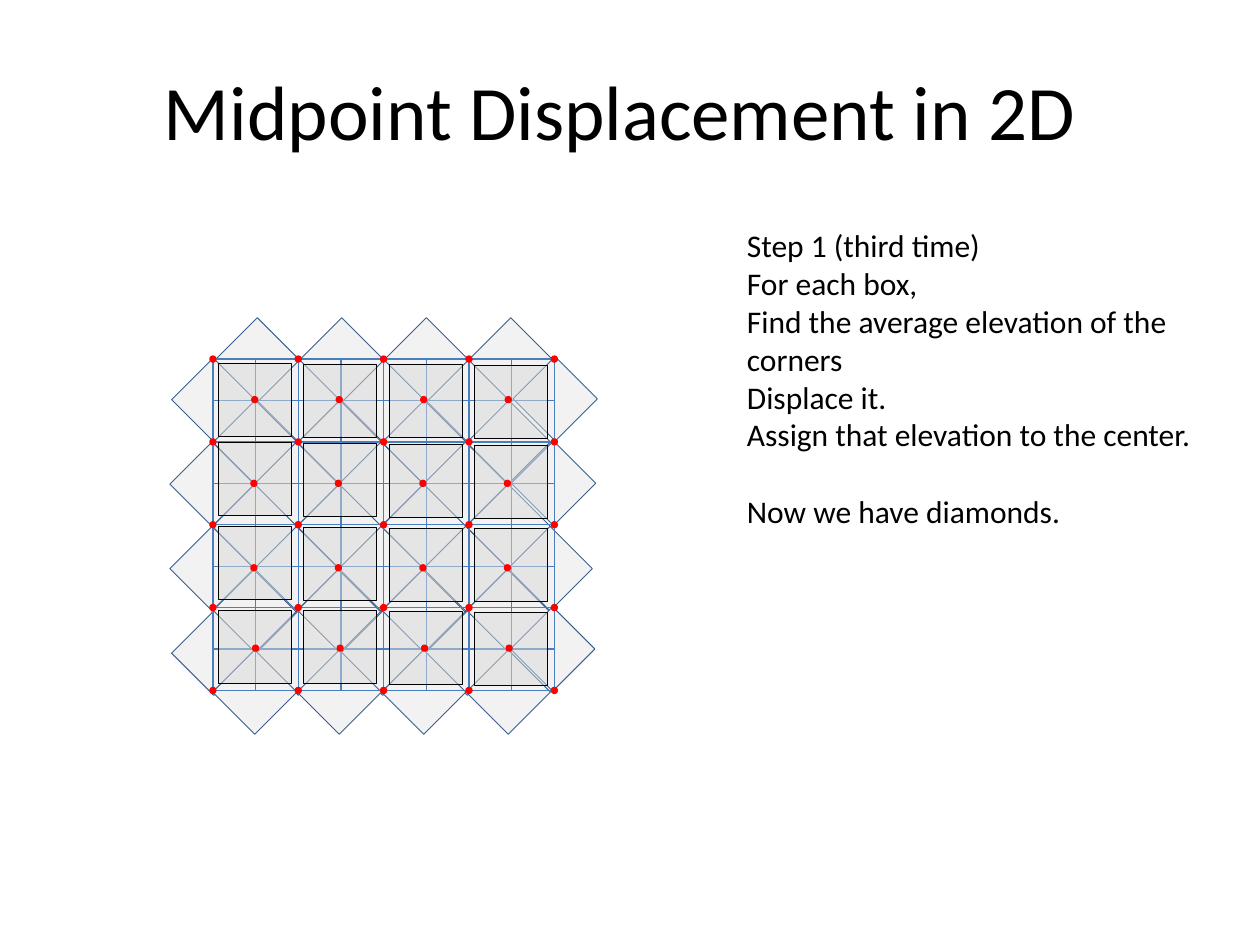
import lxml.etree
import pptx
import pptx.dml.color
import pptx.enum.shapes
import pptx.enum.text
import pptx.oxml.ns
import pptx.util

BLACK = pptx.dml.color.RGBColor(0x00, 0x00, 0x00)
RED = pptx.dml.color.RGBColor(0xFF, 0x00, 0x00)
PALE_GRAY = pptx.dml.color.RGBColor(0xF2, 0xF2, 0xF2)
BOX_GRAY = pptx.dml.color.RGBColor(0xD9, 0xD9, 0xD9)
NAVY = pptx.dml.color.RGBColor(0x3A, 0x5F, 0x8C)
GRID_BLUE = pptx.dml.color.RGBColor(0x4B, 0x7E, 0xBC)

SLIDE_W, SLIDE_H = pptx.util.Inches(10), pptx.util.Inches(7.5)
CELLS = 4
GRID_LEFT, GRID_TOP = pptx.util.Inches(1.69), pptx.util.Inches(2.85)
CELL_W = pptx.util.Inches(2.71) / CELLS
CELL_H = pptx.util.Inches(2.63) / CELLS
DIAMOND_SIZE = pptx.util.Inches(0.67)
BOX_SIZE = pptx.util.Inches(0.58)
DOT_SIZE = pptx.util.Inches(0.03)
CENTER_PITCH = 0.99

DIAMOND_ROWS = [
    (0.49, 1, 4), (0.01, 0.49, 4), (0.52, 0.01, 4), (-0.01, 1.51, 4),
    (0.49, 2.02, 4), (-0.01, 2.53, 5), (0.48, 3.05, 4), (0.01, 3.55, 4),
    (4.01, 0.48, 1), (3.99, 1.5, 1), (3.98, 3.5, 1), (0.49, 4.02, 4),
]
BOX_ROWS = [0.49, 1.45, 2.46, 3.47]
CENTER_ROWS = [(0.49, 0.49), (0.48, 1.5), (0.48, 2.52), (0.5, 3.49)]
STEPS = [
    "Step 1 (third time)",
    "For each box,",
    "Find the average elevation of the corners",
    "Displace it.",
    "Assign that elevation to the center.",
    "Now we have diamonds.",
]


def grid_point(column, row):
    return round(GRID_LEFT + column * CELL_W), round(GRID_TOP + row * CELL_H)


def place(shape, left, top, width, height):
    shape.left, shape.width = round(left * SLIDE_W), round(width * SLIDE_W)
    shape.top, shape.height = round(top * SLIDE_H), round(height * SLIDE_H)


def write_line(paragraph, text, size, color=BLACK, font="Calibri", align=None, gap=0):
    run = paragraph.add_run()
    run.text = text
    run.font.size = pptx.util.Pt(size)
    run.font.name = font
    run.font.color.rgb = color
    paragraph.alignment = align
    paragraph.space_before = pptx.util.Pt(gap)


def add_mark(shapes, kind, column, row, size, fill, line, weight, opacity=None):
    x, y = grid_point(column, row)
    mark = shapes.add_shape(kind, x - size // 2, y - size // 2, size, size)
    mark.shadow.inherit = False
    mark.fill.solid()
    mark.fill.fore_color.rgb = fill
    mark.line.color.rgb = line
    mark.line.width = pptx.util.Pt(weight)
    if opacity:
        color = mark.fill._xPr.find(".//" + pptx.oxml.ns.qn("a:srgbClr"))
        alpha = lxml.etree.SubElement(color, pptx.oxml.ns.qn("a:alpha"))
        alpha.set("val", str(opacity * 1000))


def add_diamond(shapes, column, row):
    add_mark(shapes, pptx.enum.shapes.MSO_SHAPE.DIAMOND, column, row,
             DIAMOND_SIZE, PALE_GRAY, NAVY, 0.5)


def add_box(shapes, column, row):
    add_mark(shapes, pptx.enum.shapes.MSO_SHAPE.RECTANGLE, column, row,
             BOX_SIZE, BOX_GRAY, BLACK, 0.5, opacity=49)


def add_dot(shapes, column, row):
    add_mark(shapes, pptx.enum.shapes.MSO_SHAPE.OVAL, column, row,
             DOT_SIZE, RED, RED, 2)


def add_grid_line(shapes, start, end):
    grid_line = shapes.add_connector(
        pptx.enum.shapes.MSO_CONNECTOR.STRAIGHT, *grid_point(*start), *grid_point(*end))
    grid_line.line.color.rgb = GRID_BLUE
    grid_line.line.width = pptx.util.Pt(0.75)
    lxml.etree.SubElement(grid_line._element.spPr, pptx.oxml.ns.qn("a:effectLst"))


def add_grid(shapes):
    positions = [half / 2 for half in range(2 * CELLS + 1)]
    for row in positions:
        add_grid_line(shapes, (0, row), (CELLS, row))
    for column in positions:
        add_grid_line(shapes, (column, CELLS), (column, 0))


def add_title(slide):
    title = slide.shapes.title
    place(title, 0.042, 0.033, 0.9, 0.167)
    title.text_frame.vertical_anchor = pptx.enum.text.MSO_ANCHOR.MIDDLE
    write_line(title.text_frame.paragraphs[0], "Midpoint Displacement in 2D", 44,
               align=pptx.enum.text.PP_ALIGN.CENTER)


def add_steps(slide):
    steps = slide.shapes.add_textbox(0, 0, 0, 0)
    place(steps, 0.583, 0.233, 0.4, 0.336)
    frame = steps.text_frame
    frame.word_wrap = True
    frame.auto_size = pptx.enum.text.MSO_AUTO_SIZE.SHAPE_TO_FIT_TEXT
    for index, step in enumerate(STEPS):
        paragraph = frame.add_paragraph() if index else frame.paragraphs[0]
        write_line(paragraph, step, 18, gap=22 if step == STEPS[-1] else 0)


def main():
    deck = pptx.Presentation()
    deck.slide_width, deck.slide_height = SLIDE_W, SLIDE_H
    slide = deck.slides.add_slide(deck.slide_layouts[5])
    add_title(slide)

    diamonds = slide.shapes.add_group_shape().shapes
    for first, row, count in DIAMOND_ROWS:
        for index in range(count):
            add_diamond(diamonds, first + index * CENTER_PITCH, row)
    add_grid(slide.shapes.add_group_shape().shapes)

    for row in range(CELLS + 1):
        for column in range(CELLS + 1):
            add_dot(slide.shapes, column, row)
    for row in BOX_ROWS:
        for column in range(CELLS):
            add_box(slide.shapes, column + 0.49, row + column * 0.01)
    for first, row in CENTER_ROWS:
        for index in range(CELLS):
            add_dot(slide.shapes, first + index * CENTER_PITCH, row)

    add_steps(slide)
    deck.save("out.pptx")


if __name__ == "__main__":
    main()
